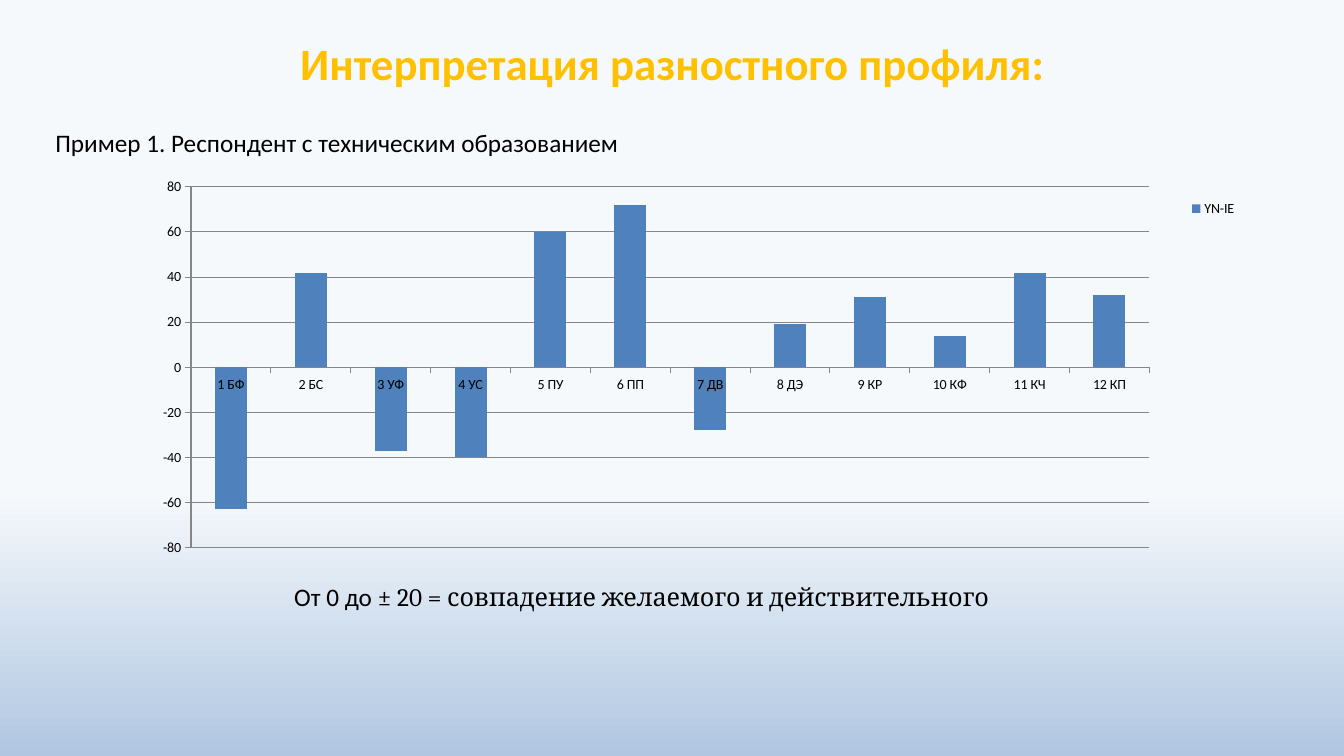
from lxml.etree import SubElement
from pptx import Presentation
from pptx.chart.data import CategoryChartData
from pptx.dml.color import RGBColor
from pptx.enum.chart import XL_CHART_TYPE, XL_LEGEND_POSITION, XL_TICK_MARK
from pptx.enum.text import MSO_ANCHOR, PP_ALIGN
from pptx.oxml.ns import qn
from pptx.util import Inches, Pt

GOLD = RGBColor(0xFF, 0xC0, 0x00)
BLACK = RGBColor(0x00, 0x00, 0x00)
BLUE = RGBColor(0x4F, 0x81, 0xBD)
GRAY = RGBColor(0x86, 0x86, 0x86)
PALE = RGBColor(0xF6, 0xF9, 0xFC)
SKY = RGBColor(0xB0, 0xC6, 0xE1)

PROFILE = {
    "1 БФ": -63, "2 БС": 42, "3 УФ": -37, "4 УС": -40,
    "5 ПУ": 60, "6 ПП": 72, "7 ДВ": -28, "8 ДЭ": 19,
    "9 КР": 31, "10 КФ": 14, "11 КЧ": 42, "12 КП": 32,
}


def add_run(p, text, size, font="Calibri", color=BLACK, bold=False):
    """Append one formatted run to a paragraph."""
    r = p.add_run()
    r.text = text
    r.font.size = Pt(size)
    r.font.name = font
    r.font.color.rgb = color
    r.font.bold = bold


def set_background(s):
    """Fill the slide with a vertical gradient, pale at the top."""
    fill = s.background.fill
    fill.gradient()
    fill.gradient_angle = 270
    for stop, position, color in zip(fill.gradient_stops, (0.65, 1), (PALE, SKY)):
        stop.position = position
        stop.color.rgb = color


def set_title(s, text, x, y, w, h):
    """Place and format the title placeholder."""
    sp = s.shapes.title
    sp.left, sp.top, sp.width, sp.height = map(Inches, (x, y, w, h))
    tf = sp.text_frame
    tf.vertical_anchor = MSO_ANCHOR.MIDDLE
    p = tf.paragraphs[0]
    p.alignment = PP_ALIGN.CENTER
    add_run(p, text, 32, color=GOLD, bold=True)


def add_text(s, runs, x, y, w, h):
    """Add a one-line text box from (text, font) pairs."""
    tf = s.shapes.add_textbox(*map(Inches, (x, y, w, h))).text_frame
    tf.word_wrap = True
    for text, font in runs:
        add_run(tf.paragraphs[0], text, 18, font)


def set_layout(layout, inner=False, **fractions):
    """Write a manual chart layout given as fractions of the chart."""
    manual = SubElement(layout, qn("c:manualLayout"))
    if inner:
        SubElement(manual, qn("c:layoutTarget")).set("val", "inner")
    for axis in ("x", "y"):
        SubElement(manual, qn(f"c:{axis}Mode")).set("val", "edge")
    for name, value in fractions.items():
        SubElement(manual, qn(f"c:{name}")).set("val", str(value))


def add_profile_chart(s, x, y, w, h):
    """Add the column chart of the difference profile."""
    data = CategoryChartData(number_format="0")
    data.categories = list(PROFILE)
    data.add_series("YN-IE", list(PROFILE.values()))
    chart = s.shapes.add_chart(
        XL_CHART_TYPE.COLUMN_CLUSTERED, *map(Inches, (x, y, w, h)), data).chart
    chart.has_title = False
    chart.font.size = Pt(10)
    chart.font.name = "Calibri"
    chart.font.color.rgb = BLACK

    plot = chart.plots[0]
    plot.gap_width = 150
    plot.vary_by_categories = False
    series = plot.series[0]
    series.invert_if_negative = False
    series.format.fill.solid()
    series.format.fill.fore_color.rgb = BLUE

    values = chart.value_axis
    values.minimum_scale, values.maximum_scale, values.major_unit = -80, 80, 20
    values.has_major_gridlines = True
    values.tick_labels.number_format = "0"
    values.tick_labels.number_format_is_linked = False
    for axis in (values, chart.category_axis):
        axis.major_tick_mark = XL_TICK_MARK.OUTSIDE
        axis.minor_tick_mark = XL_TICK_MARK.NONE
    for part in (values, values.major_gridlines, chart.category_axis):
        part.format.line.color.rgb = GRAY
        part.format.line.width = Pt(0.75)

    chart.has_legend = True
    legend = chart.legend
    legend.position = XL_LEGEND_POSITION.RIGHT
    legend.include_in_layout = False
    area = chart.element.find(".//" + qn("c:plotArea"))
    layout = area.find(qn("c:layout"))
    if layout is None:
        layout = SubElement(area, qn("c:layout"))
        area.insert(0, layout)
    set_layout(layout, True, x=0.081, y=0.061, w=0.807, h=0.695)
    box = chart.element.find(".//" + qn("c:legend"))
    legend_layout = box.find(qn("c:layout"))
    if legend_layout is None:
        legend_layout = SubElement(box, qn("c:layout"))
        box.find(qn("c:legendPos")).addnext(legend_layout)
    set_layout(legend_layout, x=0.92, y=0.08)


def build_slide(prs):
    """Build the slide that interprets the difference profile."""
    s = prs.slides.add_slide(prs.slide_layouts[5])
    set_background(s)
    set_title(s, "Интерпретация разностного профиля:", 0.67, 0, 12, 1.25)
    add_profile_chart(s, 0.94, 1.54, 11.78, 5.15)
    add_text(s, [("От 0 до ", "Calibri"),
                 ("± 20 = совпадение желаемого и действительного", "Cambria")],
             2.82, 5.72, 8.04, 0.4)
    add_text(s, [("Пример 1. Респондент с техническим образованием", "Calibri")],
             0.45, 1.21, 5.95, 0.4)


def main():
    """Create and save the presentation."""
    prs = Presentation()
    prs.slide_width, prs.slide_height = Inches(13.33), Inches(7.5)
    build_slide(prs)
    prs.save("out.pptx")


if __name__ == "__main__":
    main()
